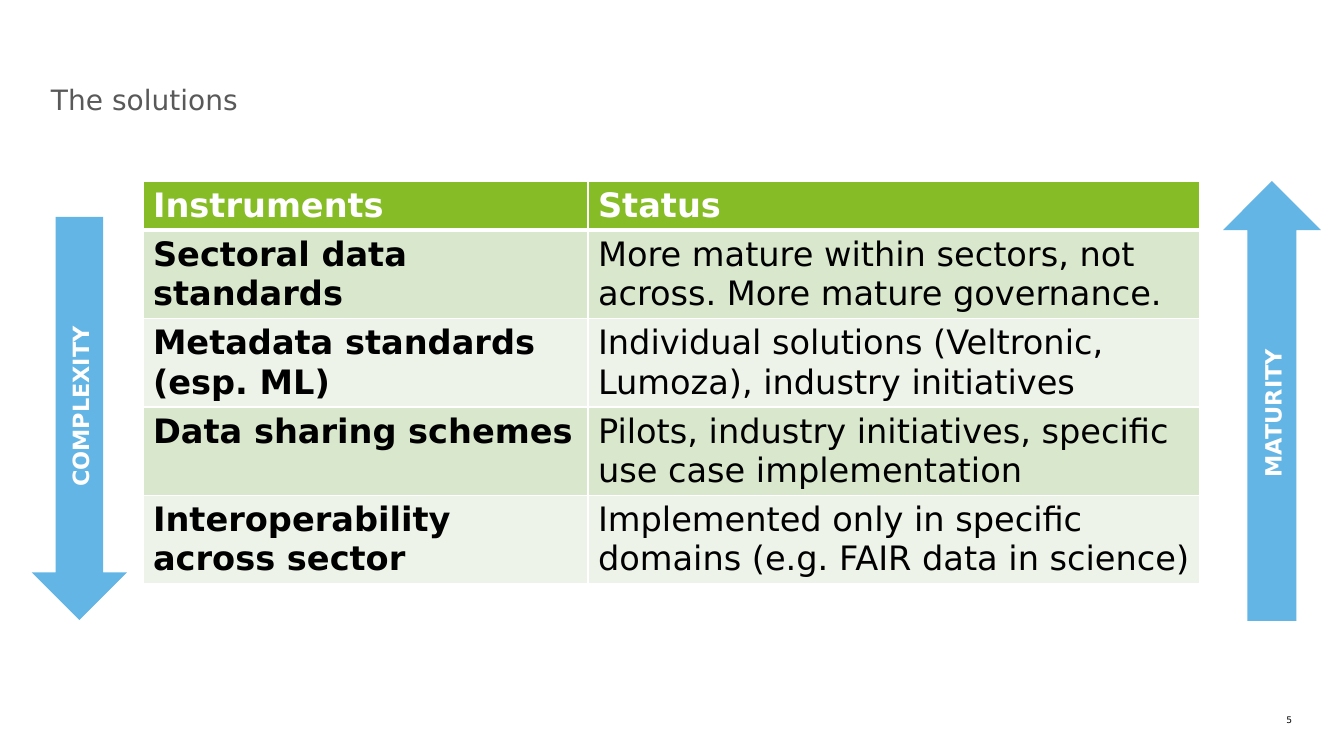
import pptx
import pptx.dml.color
import pptx.enum.shapes
import pptx.enum.text
import pptx.oxml
import pptx.oxml.ns
import pptx.util

RGB = pptx.dml.color.RGBColor
WHITE = RGB(0xFF, 0xFF, 0xFF)
BLACK = RGB(0, 0, 0)
GREY = RGB(0x59, 0x59, 0x59)
GREEN = RGB(0x86, 0xBC, 0x25)
SAGE = RGB(0xD9, 0xE7, 0xCD)
PALE = RGB(0xED, 0xF3, 0xE8)
BLUE = RGB(0x62, 0xB5, 0xE5)

KIND = pptx.enum.shapes.MSO_SHAPE
ALIGN = pptx.enum.text.PP_ALIGN
ANCHOR = pptx.enum.text.MSO_ANCHOR
SCALE = 914400 / 100.8

ROWS = [
    ("Instruments", "Status"),
    ("Sectoral data standards",
     "More mature within sectors, not across. More mature governance."),
    ("Metadata standards (esp. ML)",
     "Individual solutions (Veltronic, Lumoza), industry initiatives"),
    ("Data sharing schemes",
     "Pilots, industry initiatives, specific use case implementation"),
    ("Interoperability across sector",
     "Implemented only in specific domains (e.g. FAIR data in science)"),
]


def px(num):
    return pptx.util.Emu(round(num * SCALE))


def apply(item, form):
    for key, value in form.items():
        setattr(item, key, value)


class Deck:
    """Holds the text style and the current slide."""

    def __init__(self, wide, high):
        self.font = "DejaVu Sans"
        self.file = pptx.Presentation()
        apply(self.file, {"slide_width": px(wide), "slide_height": px(high)})
        self.slide = self.file.slides.add_slide(self.file.slide_layouts[5])

    def text(self, frame, words, size, color, bold=False, **form):
        frame.word_wrap = True
        para = frame.paragraphs[0]
        run = para.add_run()
        run.text = words
        apply(para, form)
        apply(run.font, {"name": self.font, "size": pptx.util.Pt(size), "bold": bold})
        run.font.color.rgb = color

    def pad(self, frame, gap, anchor):
        sides = ("left", "top", "right", "bottom")
        apply(frame, {f"margin_{side}": px(gap) for side in sides})
        apply(frame, {"vertical_anchor": anchor,
                      "auto_size": pptx.enum.text.MSO_AUTO_SIZE.NONE})

    def title(self, words, box):
        shape = self.slide.shapes.title
        apply(shape, dict(zip(("left", "top", "width", "height"), map(px, box))))
        self.pad(shape.text_frame, 0, ANCHOR.TOP)
        self.text(shape.text_frame, words, 20, GREY, alignment=ALIGN.LEFT,
                  space_after=pptx.util.Pt(13.3))

    def label(self, words, box):
        frame = self.slide.shapes.add_textbox(*map(px, box)).text_frame
        self.pad(frame, 0, ANCHOR.TOP)
        self.text(frame, words, 6.5, BLACK, alignment=ALIGN.RIGHT)

    def arrow(self, kind, words, box):
        shape = self.slide.shapes.add_shape(kind, *map(px, box))
        shape.rotation = 270
        shape.shadow.inherit = False
        shape.fill.solid()
        shape.fill.fore_color.rgb = BLUE
        shape.line.fill.background()
        self.pad(shape.text_frame, 10, ANCHOR.MIDDLE)
        self.text(shape.text_frame, words, 16, WHITE, True,
                  alignment=ALIGN.CENTER, line_spacing=1.06)

    def edge(self, cell, **widths):
        props = cell._tc.get_or_add_tcPr()
        for side in "LRTB":
            width = pptx.util.Pt(widths.get(side, 1))
            props.append(pptx.oxml.parse_xml(
                f'<a:ln{side} {pptx.oxml.ns.nsdecls("a")} w="{width}"><a:solidFill>'
                f'<a:srgbClr val="{WHITE}"/></a:solidFill></a:ln{side}>'))

    def table(self, rows, left, top, cols, highs):
        box = (left, top, sum(cols), sum(highs))
        grid = self.slide.shapes.add_table(len(rows), len(cols), *map(px, box)).table
        for col, wide in zip(grid.columns, cols):
            col.width = px(wide)
        for i, texts in enumerate(rows):
            grid.rows[i].height = px(highs[i])
            head = i == 0
            for j, words in enumerate(texts):
                cell = grid.cell(i, j)
                self.edge(cell, **({"B": 3} if head else {"T": 3} if i == 1 else {}))
                cell.fill.solid()
                cell.fill.fore_color.rgb = GREEN if head else (PALE, SAGE)[i % 2]
                self.text(cell.text_frame, words, 24, WHITE if head else BLACK,
                          head or j == 0)


def main():
    deck = Deck(1344, 756)
    deck.label("5", (1258, 714, 34, 11))
    deck.title("The solutions", (51, 82, 1241, 84))
    deck.table(ROWS, 143, 181, (445, 612), [49] + [88] * 4)
    deck.arrow(KIND.LEFT_ARROW, "COMPLEXITY", (-122, 371, 403, 95))
    deck.arrow(KIND.RIGHT_ARROW, "MATURITY", (1052, 352, 440, 98))
    deck.file.save("out.pptx")


if __name__ == "__main__":
    main()
